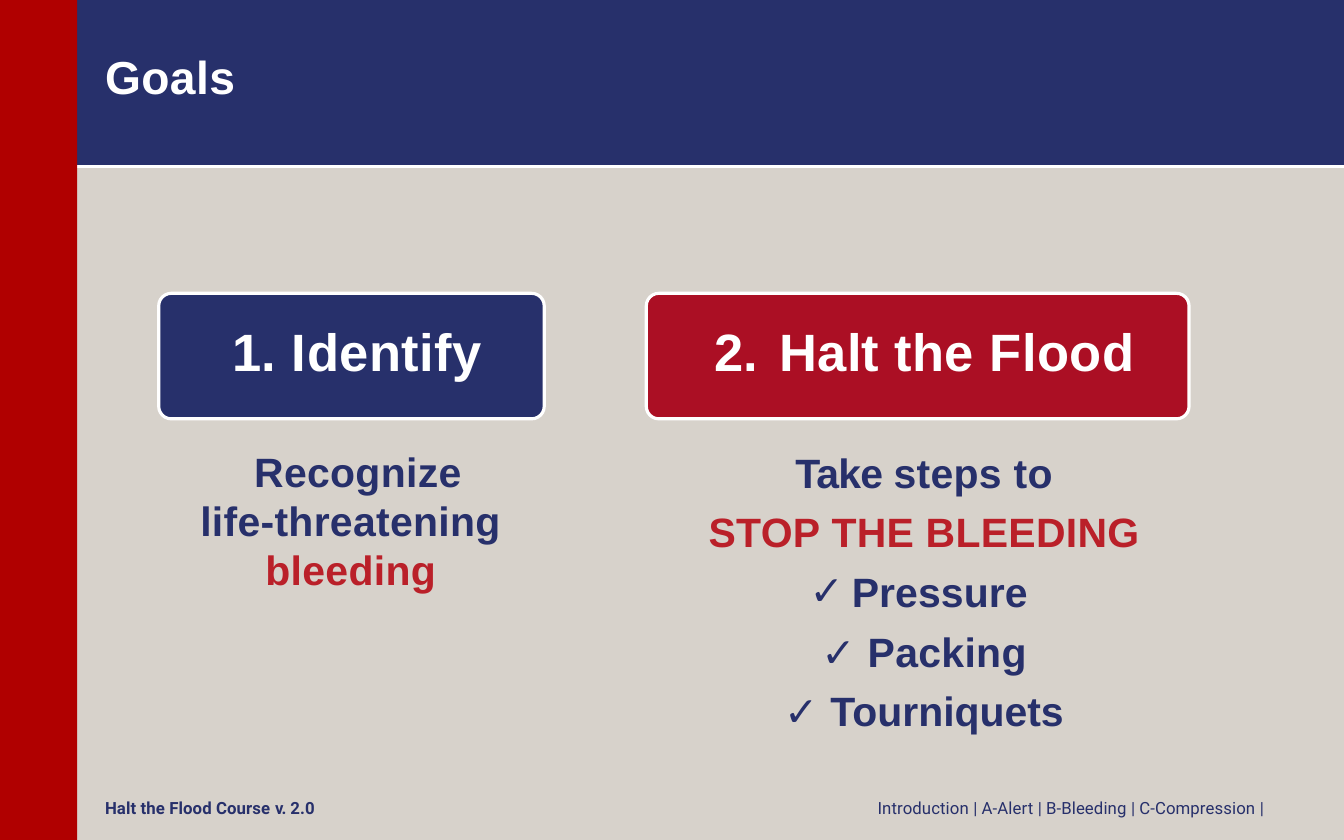
from dataclasses import dataclass

from lxml import etree
from pptx import Presentation
from pptx.dml.color import RGBColor
from pptx.enum.shapes import MSO_CONNECTOR, MSO_SHAPE
from pptx.enum.text import MSO_ANCHOR, MSO_AUTO_SIZE, PP_ALIGN
from pptx.oxml.ns import qn
from pptx.util import Inches, Pt

RECT, ROUND = MSO_SHAPE.RECTANGLE, MSO_SHAPE.ROUNDED_RECTANGLE
STRAIGHT = MSO_CONNECTOR.STRAIGHT
LEFT, CENTER = PP_ALIGN.LEFT, PP_ALIGN.CENTER
TOP, MIDDLE = MSO_ANCHOR.TOP, MSO_ANCHOR.MIDDLE
NO_FIT = MSO_AUTO_SIZE.NONE
NAVY, WHITE, SAND = "27306B", "FFFFFF", "D7D2CB"
BAR, CRIMSON, ACCENT = "B00000", "AB0F24", "BA2029"
WIDE, HIGH, HEAD = 17.78, 11.11, 2.2


@dataclass
class Run:
    text: str
    color: str = NAVY
    size: float = 39
    bold: bool = True
    gap: float = 0.3
    font: str = "Arial"


@dataclass
class Para:
    runs: list[Run]
    align: PP_ALIGN = CENTER
    before: float = 0
    line: float | None = None
    margin: float = 0
    indent: float = 0
    bullet: str = ""
    start: int = 0


@dataclass
class Card:
    left: float
    width: float
    fill: str
    head: Para
    inset: tuple[float, float]


@dataclass
class Block:
    left: float
    top: float
    width: float
    height: float
    paras: list[Para]


def rgb(code: str) -> RGBColor:
    return RGBColor.from_string(code)


def write(frame, paras: list[Para], anchor=TOP, inset=(0, 0),
          base: float = 0) -> None:
    frame.word_wrap = True
    frame.auto_size = NO_FIT
    frame.vertical_anchor = anchor
    frame.margin_left, frame.margin_right = map(Inches, inset)
    frame.margin_top, frame.margin_bottom = 0, Inches(base)
    for i, para in enumerate(paras):
        p = frame.paragraphs[0] if i == 0 else frame.add_paragraph()
        p.alignment = para.align
        p.space_before = Pt(para.before)
        if para.line:
            p.line_spacing = Pt(para.line)
        props = p._p.get_or_add_pPr()
        props.set("marL", str(Inches(para.margin)))
        props.set("indent", str(Inches(para.indent)))
        if para.start:
            mark = etree.SubElement(props, qn("a:buAutoNum"))
            mark.set("type", "arabicPeriod")
            mark.set("startAt", str(para.start))
        elif para.bullet:
            etree.SubElement(props, qn("a:buFont")).set("typeface", "Arial")
            etree.SubElement(props, qn("a:buChar")).set("char", para.bullet)
        else:
            etree.SubElement(props, qn("a:buNone"))
        for part in para.runs:
            run = p.add_run()
            run.text = part.text
            run.font.name, run.font.size = part.font, Pt(part.size)
            run.font.bold = part.bold
            run.font.color.rgb = rgb(part.color)
            run._r.get_or_add_rPr().set("spc", str(round(part.gap * 100)))


def add_box(slide, kind, left: float, top: float, width: float, height: float,
            fill: str):
    box = slide.shapes.add_shape(
        kind, Inches(left), Inches(top), Inches(width), Inches(height))
    box.shadow.inherit = False
    box.fill.solid()
    box.fill.fore_color.rgb = rgb(fill)
    box.line.fill.background()
    return box


def add_card(slide, card: Card) -> None:
    box = add_box(slide, ROUND, card.left, 3.88, card.width, 1.66, card.fill)
    box.adjustments[0] = 0.1
    box.line.color.rgb = rgb(WHITE)
    box.line.width = Pt(3)
    write(box.text_frame, [card.head], MIDDLE, card.inset, 0.15)


def add_block(slide, block: Block) -> None:
    box = slide.shapes.add_textbox(
        Inches(block.left), Inches(block.top),
        Inches(block.width), Inches(block.height))
    write(box.text_frame, block.paras)


def add_rule(slide) -> None:
    rule = slide.shapes.add_connector(
        STRAIGHT, 0, Inches(HEAD), Inches(WIDE), Inches(HEAD))
    rule.line.color.rgb = rgb(WHITE)
    rule.line.width = Pt(3)
    etree.SubElement(rule._element.spPr, qn("a:effectLst"))


def set_title(slide) -> None:
    title = slide.shapes.title
    title.left, title.top = Inches(1.39), Inches(0.64)
    title.width, title.height = Inches(5.26), Inches(0.75)
    write(title.text_frame,
          [Para([Run("Goals", WHITE, 44, gap=0.4)], LEFT, before=1)])


def head(text: str, gap: float = 0.5) -> Run:
    return Run(text, WHITE, 50, gap=gap)


def foot(text: str, bold: bool = False, gap: float = 0.1) -> Run:
    return Run(text, size=16, bold=bold, gap=gap, font="Roboto")


def step(runs: list[Run], before: float = 10, **more) -> Para:
    return Para(runs, before=before, line=46.7, **more)


CARDS = [
    Card(2.1, 5.1, NAVY, Para([head("1.", 0.3), head(" Identify")]),
         (0.16, 0)),
    Card(8.55, 7.18, CRIMSON,
         Para([head("Halt the ", 0.3), head("Flood")],
              margin=0.87, indent=-0.86, start=2), (0.51, 0.34)),
]

TICKS = [step([Run("✓ ", bold=False), Run(name, gap=gap)])
         for name, gap in (("Packing", 0.3), ("Tourniquets", 0))]
TOPICS = ["Introduction ", "A-Alert ", "B-Bleeding ", "C-Compression "]

BLOCKS = [
    Block(2.14, 5.91, 5, 2, [
        step([Run("Recognize")], 0, margin=0.19),
        step([Run("life-threatening "), Run("bleeding", ACCENT)], 0),
    ]),
    Block(9.06, 5.92, 6.33, 3.85, [
        step([Run("Take ", gap=-0.8), Run("steps to")], 0),
        step([Run("STOP ", ACCENT), Run("THE ", ACCENT, gap=0.2),
              Run("BLEEDING", ACCENT)]),
        step([Run("Pressure", gap=0.1)], align=LEFT,
             margin=2.21, indent=-0.56, bullet="✓"),
        *TICKS,
    ]),
    Block(1.39, 10.55, 4.93, 0.29, [
        Para([foot("Halt the Flood Course ", True),
              foot("v. ", True, -0.4), foot("2.0", True)], LEFT)]),
    Block(11.61, 10.55, 6, 0.28, [
        Para([run for topic in TOPICS
              for run in (foot(topic), foot("| ", gap=0))],
             LEFT, line=19.1)]),
]


def main() -> None:
    deck = Presentation()
    deck.slide_width, deck.slide_height = Inches(WIDE), Inches(HIGH)
    slide = deck.slides.add_slide(deck.slide_layouts[5])
    slide.background.fill.solid()
    slide.background.fill.fore_color.rgb = rgb(SAND)
    band = add_box(slide, RECT, 0, 0, WIDE, HEAD, NAVY)
    slide.shapes.title._element.addprevious(band._element)
    add_rule(slide)
    set_title(slide)
    for card in CARDS:
        add_card(slide, card)
    for block in BLOCKS:
        add_block(slide, block)
    add_box(slide, RECT, 0, 0, 1.02, HIGH, BAR)
    deck.save("out.pptx")


if __name__ == "__main__":
    main()
